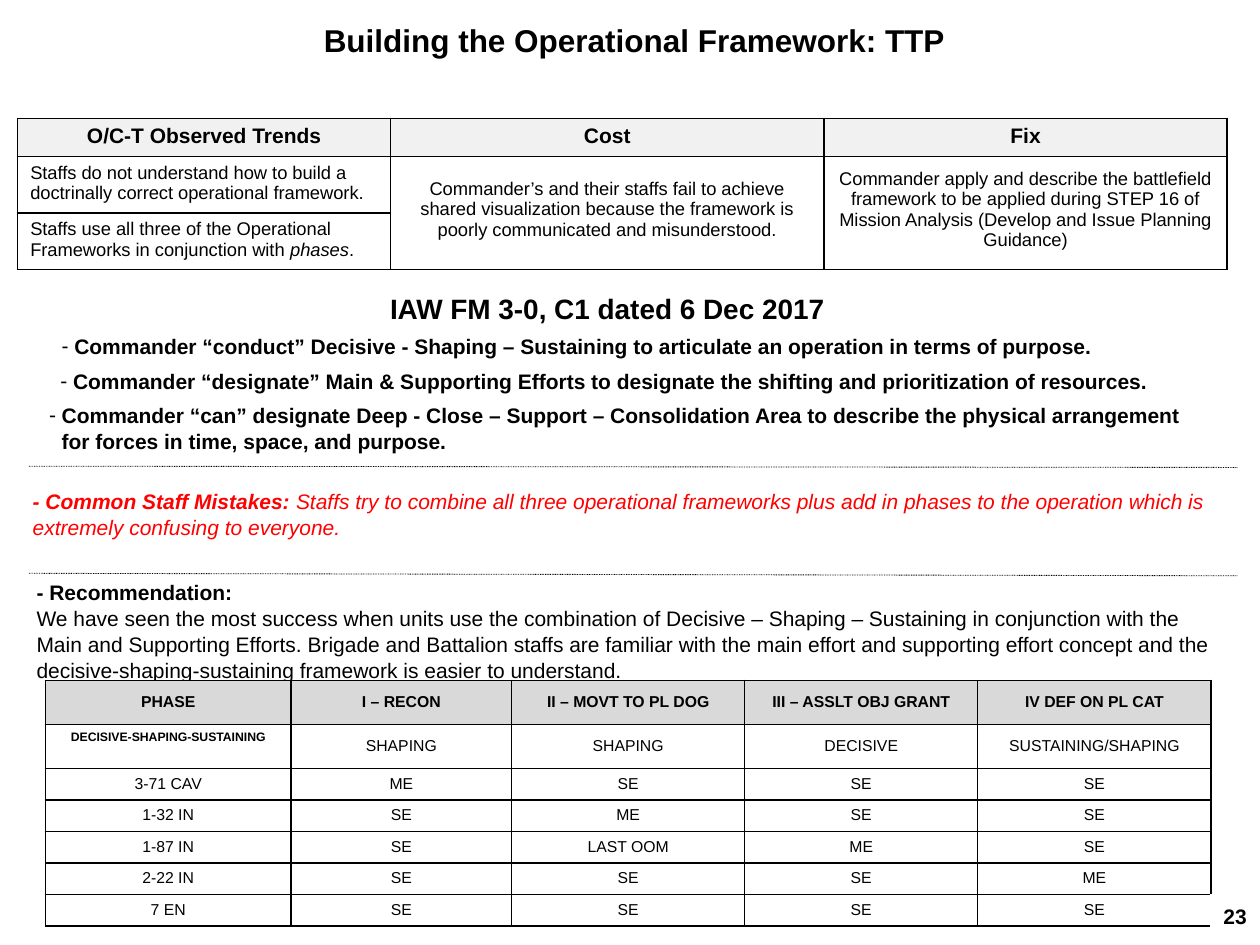
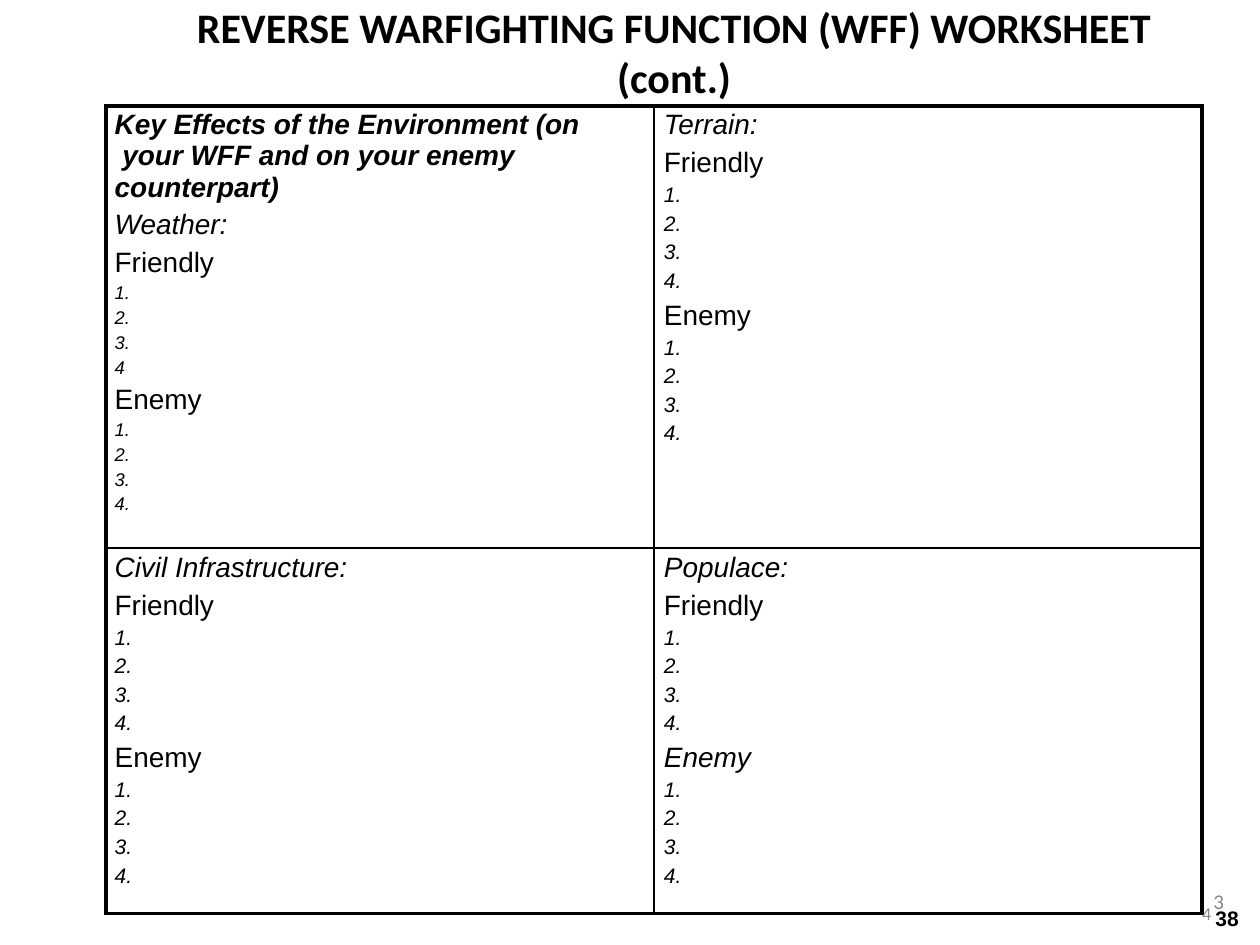
from dataclasses import dataclass, replace

from lxml.etree import SubElement
from pptx import Presentation
from pptx.dml.color import RGBColor
from pptx.enum.dml import MSO_LINE
from pptx.enum.shapes import MSO_CONNECTOR
from pptx.enum.text import PP_ALIGN
from pptx.oxml.ns import qn
from pptx.util import Inches, Pt

BLACK, RED, GRAY, WHITE = "000000", "FF0000", "888888", "FFFFFF"
LIGHT_HEADER, DARK_HEADER = "F1F1F1", "D9D9D9"


def color(value):
    """Turn a hex string into a colour."""
    return RGBColor.from_string(value)


@dataclass
class Text:
    """One paragraph: a string, or (string, font settings) pairs, and its style."""

    content: object
    size: float = 12
    bold: bool = False
    italic: bool = False
    ink: str = BLACK
    face: str = "Arial"
    center: bool = False
    left: float = 0
    hanging: float = 0
    before: float = 0
    spacing: object = None
    bullet: str = ""


class Deck:
    """Holds the presentation style and the current slide."""

    def __init__(self):
        self.presentation = Presentation()
        self.presentation.slide_width = Inches(10)
        self.presentation.slide_height = Inches(7.5)
        self.slide = None

    def add_slide(self):
        """Start a new blank slide."""
        self.slide = self.presentation.slides.add_slide(self.presentation.slide_layouts[6])

    def fill_frame(self, frame, texts):
        """Write the paragraphs into a text frame."""
        for index, text in enumerate(texts):
            paragraph = frame.paragraphs[0] if index == 0 else frame.add_paragraph()
            self.fill_paragraph(paragraph, text, first=index == 0)

    def fill_paragraph(self, paragraph, text, first):
        """Write and style one paragraph."""
        paragraph.alignment = PP_ALIGN.CENTER if text.center else PP_ALIGN.LEFT
        if text.before and not first:
            paragraph.space_before = Pt(text.before)
        if text.spacing:
            paragraph.line_spacing = text.spacing
        properties = paragraph._p.get_or_add_pPr()
        properties.set("marL", str(Inches(text.left)))
        properties.set("indent", str(Inches(-text.hanging)))
        if text.bullet:
            SubElement(properties, qn("a:buFont"), typeface=text.face)
            SubElement(properties, qn("a:buChar"), char=text.bullet)
        font = paragraph.font
        font.name, font.size = text.face, Pt(text.size)
        font.bold, font.italic = text.bold, text.italic
        font.color.rgb = color(text.ink)
        pairs = [(text.content, {})] if isinstance(text.content, str) else text.content
        for words, settings in pairs:
            for index, line in enumerate(words.split("\n")):
                if index:
                    paragraph.add_line_break()
                run = paragraph.add_run()
                run.text = line
                self.style_run(run, settings)

    def style_run(self, run, settings):
        """Apply the settings that differ from the paragraph."""
        for name, value in settings.items():
            if name == "ink":
                run.font.color.rgb = color(value)
            elif name == "baseline":
                run._r.get_or_add_rPr().set("baseline", str(value))
            else:
                setattr(run.font, name, value)

    def text(self, left, top, width, height, *texts):
        """Add a text box without insets."""
        shape = self.slide.shapes.add_textbox(*map(Inches, (left, top, width, height)))
        frame = shape.text_frame
        frame.word_wrap = True
        frame.margin_left = frame.margin_right = frame.margin_top = frame.margin_bottom = 0
        self.fill_frame(frame, texts)

    def dotted_line(self, left, top, right, bottom):
        """Add a thin dotted rule."""
        connector = self.slide.shapes.add_connector(
            MSO_CONNECTOR.STRAIGHT, *map(Inches, (left, top, right, bottom)))
        connector.line.color.rgb = color(BLACK)
        connector.line.width = Pt(0.48)
        connector.line.dash_style = MSO_LINE.ROUND_DOT
        SubElement(connector._element.spPr, qn("a:effectLst"))

    def table(self, left, top, columns, rows, outer=1):
        """Add an empty table with ruled cells."""
        frame = self.slide.shapes.add_table(
            len(rows), len(columns), Inches(left), Inches(top),
            Inches(sum(columns)), Inches(sum(rows)))
        table = frame.table
        table.first_row = table.horz_banding = False
        for column, width in zip(table.columns, columns):
            column.width = Inches(width)
        for row, height in zip(table.rows, rows):
            row.height = Inches(height)
        last_row, last_column = len(rows) - 1, len(columns) - 1
        for r in range(len(rows)):
            for c in range(len(columns)):
                edges = {"L": c == 0, "R": c == last_column, "T": r == 0, "B": r == last_row}
                for side, at_edge in edges.items():
                    self.border(table.cell(r, c), side, outer if at_edge else 1)
        return table

    def border(self, cell, side, width):
        """Rule one side of a cell."""
        line = SubElement(cell._tc.get_or_add_tcPr(), qn(f"a:ln{side}"), w=str(Pt(width)))
        fill = SubElement(line, qn("a:solidFill"))
        SubElement(fill, qn("a:srgbClr"), val=BLACK)

    def cell(self, cell, texts, top=0.05, fill=WHITE):
        """Fill one table cell."""
        cell.margin_left = cell.margin_right = cell.margin_bottom = 0
        cell.margin_top = Inches(top)
        cell.fill.solid()
        cell.fill.fore_color.rgb = color(fill)
        self.fill_frame(cell.text_frame, texts)


def add_trends_table(deck):
    """Add the table of trends, cost and fix."""
    table = deck.table(0.14, 0.94, [2.96, 3.44, 3.2], [0.3, 0.45, 0.45])
    deck.cell(table.cell(0, 0), [Text("O/C-T Observed Trends", bold=True, left=0.55)],
              fill=LIGHT_HEADER)
    for column, heading in enumerate(["Cost", "Fix"], 1):
        table.cell(1, column).merge(table.cell(2, column))
        deck.cell(table.cell(0, column), [Text(heading, bold=True, center=True)],
                  fill=LIGHT_HEADER)
    trends = [
        "Staffs do not understand how to build a\ndoctrinally correct operational framework.",
        [("Staffs use all three of the Operational\nFrameworks in conjunction with ", {}),
         ("phases", {"italic": True}), (".", {})],
    ]
    for row, trend in enumerate(trends, 1):
        deck.cell(table.cell(row, 0), [Text(trend, 10.5, left=0.1)])
    cost = ("Commander’s and their staffs fail to achieve\n"
            "shared visualization because the framework is\n"
            "poorly communicated and misunderstood.")
    fix = ("Commander apply and describe the battlefield\n"
           "framework to be applied during STEP 16 of\n"
           "Mission Analysis (Develop and Issue Planning\nGuidance)")
    deck.cell(table.cell(1, 1), [Text(cost, 10.5, center=True)], top=0.18)
    deck.cell(table.cell(1, 2), [Text(fix, 10.5, center=True)], top=0.1)


def add_phase_table(deck):
    """Add the table of units by phase."""
    rows = [
        ["PHASE", "I – RECON", "II – MOVT TO PL DOG", "III – ASSLT OBJ GRANT",
         "IV DEF ON PL CAT"],
        ["DECISIVE-SHAPING-SUSTAINING", "SHAPING", "SHAPING", "DECISIVE",
         "SUSTAINING/SHAPING"],
        ["3-71 CAV", "ME", "SE", "SE", "SE"],
        ["1-32 IN", "SE", "ME", "SE", "SE"],
        ["1-87 IN", "SE", "LAST OOM", "ME", "SE"],
        ["2-22 IN", "SE", "SE", "SE", "ME"],
        ["7 EN", "SE", "SE", "SE", "SE"],
    ]
    table = deck.table(0.36, 5.4, [1.95, 1.75] + [1.85] * 3, [0.35] * 2 + [0.25] * 5)
    for r, row in enumerate(rows):
        for c, words in enumerate(row):
            effort_label = (r, c) == (1, 0)
            text = Text(words, 7 if effort_label else 9, center=True,
                        bold=r == 0 or effort_label)
            deck.cell(table.cell(r, c), [text], top=0.1 if r < 2 and not effort_label else 0.05,
                      fill=WHITE if r else DARK_HEADER)
    last_properties = table.cell(6, 4)._tc.tcPr
    last_properties.remove(last_properties.find(qn("a:lnR")))


def build_framework_slide(deck):
    """Build the operational framework slide."""
    deck.add_slide()
    deck.text(2.57, 0.17, 5.2, 0.33,
              Text("Building the Operational Framework: TTP", 18, bold=True))
    add_trends_table(deck)
    deck.dotted_line(0.23, 3.7, 9.82, 3.71)
    deck.dotted_line(0.23, 4.55, 9.82, 4.57)

    body = Text("", spacing=1.04)
    bullet = replace(body, bold=True, bullet="-", hanging=0.1, before=4.8)
    deck.text(0.25, 2.31, 9.14, 0.28,
              Text("IAW FM 3-0, C1 dated 6 Dec 2017", 16, bold=True, center=True))
    deck.text(
        0.25, 2.64, 9.6, 1,
        replace(bullet, left=0.34, content="Commander “conduct” Decisive - Shaping – Sustaining "
                "to articulate an operation in terms of purpose."),
        replace(bullet, left=0.33, content="Commander “designate” Main & Supporting Efforts "
                "to designate the shifting and prioritization of resources."),
        replace(bullet, left=0.24, content="Commander “can” designate Deep - Close – Support – "
                "Consolidation Area to describe the physical arrangement\n"
                "for forces in time, space, and purpose."))
    deck.text(
        0.26, 3.87, 9.6, 0.4,
        replace(body, italic=True, ink=RED, content=[
            ("- Common Staff Mistakes: ", {"bold": True}),
            ("Staffs try to combine all three operational frameworks plus add in phases "
             "to the operation which is\nextremely confusing to everyone.", {})]))
    deck.text(
        0.29, 4.59, 9.6, 0.8,
        replace(body, content="- Recommendation:", bold=True),
        replace(body, content="We have seen the most success when units use the combination of "
                "Decisive – Shaping – Sustaining in conjunction with the\n"
                "Main and Supporting Efforts. Brigade and Battalion staffs are familiar with "
                "the main effort and supporting effort concept and the\n"
                "decisive-shaping-sustaining framework is easier to understand."))
    deck.text(9.67, 7.17, 0.28, 0.21, Text("23", bold=True, left=0.04))
    add_phase_table(deck)


def worksheet_cell(topic, left, size=12, before=2.9, intro=(), last_friendly="4.",
                   enemy_italic=False):
    """List the paragraphs of one worksheet cell."""
    heading = Text(topic, 16, italic=True, left=left, before=3.9)
    texts = [*intro, heading]
    sides = [("Friendly", False, last_friendly), ("Enemy", enemy_italic, "4.")]
    for side, italic, last in sides:
        texts.append(replace(heading, content=side, italic=italic))
        texts += [Text(number, size, italic=True, left=left, before=before)
                  for number in ("1.", "2.", "3.", last)]
    return texts


def build_worksheet_slide(deck):
    """Build the worksheet slide."""
    deck.add_slide()
    title = Text("REVERSE WARFIGHTING FUNCTION (WFF) WORKSHEET", 24, bold=True,
                 face="Calibri", center=True)
    deck.text(1.35, 0.01, 8, 0.82, title, replace(title, content="(cont.)"))
    intro = Text("Key Effects of the Environment (on\n your WFF and on your enemy\ncounterpart)",
                 16, bold=True, italic=True, left=0.07)
    cells = [
        [worksheet_cell("Weather:", 0.07, 10.5, 2.5, [intro], "4"),
         worksheet_cell("Terrain:", 0.08)],
        [worksheet_cell("Civil Infrastructure:", 0.07),
         worksheet_cell("Populace:", 0.08, enemy_italic=True)],
    ]
    table = deck.table(0.84, 0.84, [4.35] * 2, [3.51, 2.9], outer=2.25)
    for r, row in enumerate(cells):
        for c, texts in enumerate(row):
            deck.cell(table.cell(r, c), texts, top=0.03)
    deck.text(9.63, 7.09, 0.15, 0.17,
              Text("3", face="Calibri", ink=GRAY, spacing=Pt(11.4)))
    number = {"name": "Arial", "size": Pt(12), "bold": True, "ink": BLACK}
    deck.text(9.5, 7.1, 0.5, 0.23,
              Text([("4 ", {"baseline": 16000}), ("38", number)], 18, ink=GRAY,
                   face="Calibri", left=0.04))


def main():
    """Build and save the presentation."""
    deck = Deck()
    build_framework_slide(deck)
    build_worksheet_slide(deck)
    deck.presentation.save("out.pptx")


if __name__ == "__main__":
    main()
